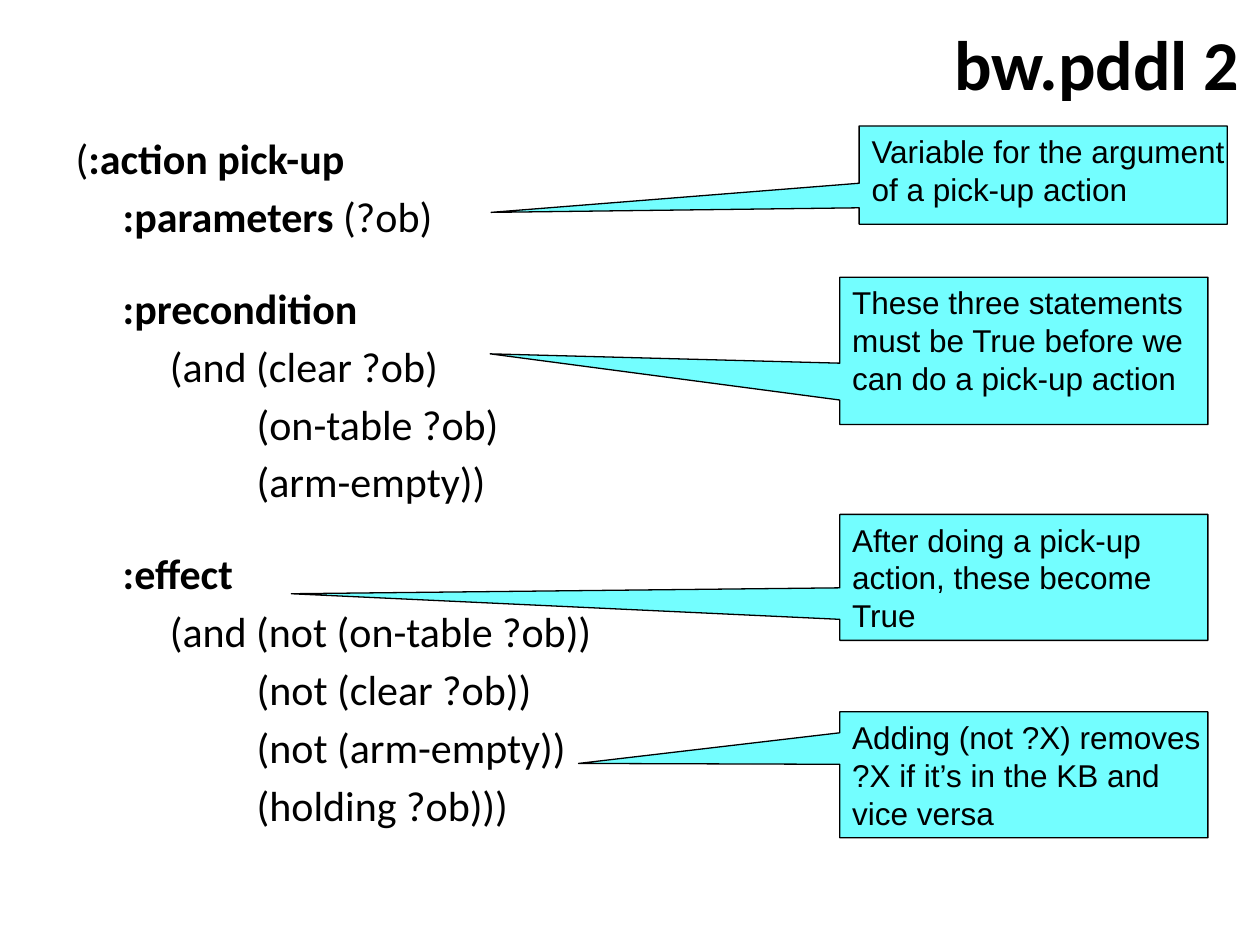
"""Build the slide that explains the pick-up action of bw.pddl."""
from lxml.etree import SubElement
from pptx import Presentation
from pptx.dml.color import RGBColor
from pptx.enum.shapes import MSO_SHAPE
from pptx.enum.text import MSO_ANCHOR, MSO_AUTO_SIZE, PP_ALIGN
from pptx.oxml.ns import qn
from pptx.util import Cm, Pt

COLORS = {"text": "000000", "callout": "73FEFF", "outline": "000000"}
TITLE_FONT = {"name": "Calibri", "size": Pt(40), "bold": True}
CODE_FONT = {"name": "Calibri", "size": Pt(24)}
NOTE_FONT = {"name": "Arial", "size": Pt(18), "bold": False}


def style(font, values):
    for key, value in values.items():
        setattr(font, key, value)
    font.color.rgb = RGBColor.from_string(COLORS["text"])


def place(shape, left, top, width, height):
    shape.left, shape.top = Cm(left), Cm(top)
    shape.width, shape.height = Cm(width), Cm(height)


prs = Presentation()
prs.slide_width, prs.slide_height = Cm(25.4), Cm(19.05)
slide = prs.slides.add_slide(prs.slide_layouts[1])

heading = slide.shapes.title
place(heading, 18.62, 0, 6.98, 2.54)
heading.text_frame.text = "bw.pddl 2"
heading.text_frame.auto_size = MSO_AUTO_SIZE.NONE
heading.text_frame.vertical_anchor = MSO_ANCHOR.MIDDLE
heading_line = heading.text_frame.paragraphs[0]
heading_line.alignment = PP_ALIGN.CENTER
style(heading_line.runs[0].font, TITLE_FONT)

INDENTS = [0, 0.95, 1.9, 3.65]
LINE_GAP, SECTION_GAP = Pt(4.3), Pt(23.7)
code_lines = [
    (0, LINE_GAP, [("(", False), (":action pick-up", True)]),
    (1, LINE_GAP, [(":parameters ", True), ("(?ob)", False)]),
    (1, SECTION_GAP, [(":precondition", True)]),
    (2, LINE_GAP, [("(and (clear ?ob)", False)]),
    (3, LINE_GAP, [("(on-table ?ob)", False)]),
    (3, LINE_GAP, [("(arm-empty))", False)]),
    (1, SECTION_GAP, [(":effect", True)]),
    (2, LINE_GAP, [("(and (not (on-table ?ob))", False)]),
    (3, LINE_GAP, [("(not (clear ?ob))", False)]),
    (3, LINE_GAP, [("(not (arm-empty))", False)]),
    (3, LINE_GAP, [("(holding ?ob)))", False)]),
]

action = slide.placeholders[1]
place(action, 1.27, 2.54, 21.59, 15.67)
action.text_frame.auto_size = MSO_AUTO_SIZE.NONE
for index, (depth, gap, parts) in enumerate(code_lines):
    paragraphs = action.text_frame
    line = paragraphs.add_paragraph() if index else paragraphs.paragraphs[0]
    line.space_before = gap
    properties = line._p.get_or_add_pPr()
    properties.set("marL", str(Cm(INDENTS[depth])))
    properties.set("indent", "0")
    SubElement(properties, qn("a:buNone"))
    for words, bold in parts:
        run = line.add_run()
        run.text = words
        style(run.font, {**CODE_FONT, "bold": bold})

notes = [
    (17.32, 2.54, 1.98, (-1.5, 0.38),
     "Variable for the argument\nof a pick-up action"),
    (16.93, 5.59, 2.97, (-1.45, 0.02),
     "These three statements\nmust be True before we\ncan do a pick-up action"),
    (16.93, 10.37, 2.54, (-1.99, 0.13),
     "After doing a pick-up\naction, these become\nTrue"),
    (16.93, 14.35, 2.54, (-1.21, -0.09),
     "Adding (not ?X) removes\n?X if it’s in the KB and\nvice versa"),
]
for left, top, height, tip, words in notes:
    note = slide.shapes.add_shape(
        MSO_SHAPE.RECTANGULAR_CALLOUT, Cm(left), Cm(top), Cm(7.42), Cm(height))
    note.adjustments[0], note.adjustments[1] = tip
    note.shadow.inherit = False
    note.fill.solid()
    note.fill.fore_color.rgb = RGBColor.from_string(COLORS["callout"])
    note.line.color.rgb = RGBColor.from_string(COLORS["outline"])
    note.line.width = Pt(0.75)
    note.text_frame.text = words
    note.text_frame.word_wrap = False
    note.text_frame.vertical_anchor = MSO_ANCHOR.TOP
    for line in note.text_frame.paragraphs:
        line.alignment = PP_ALIGN.LEFT
        style(line.runs[0].font, NOTE_FONT)

prs.save("out.pptx")
